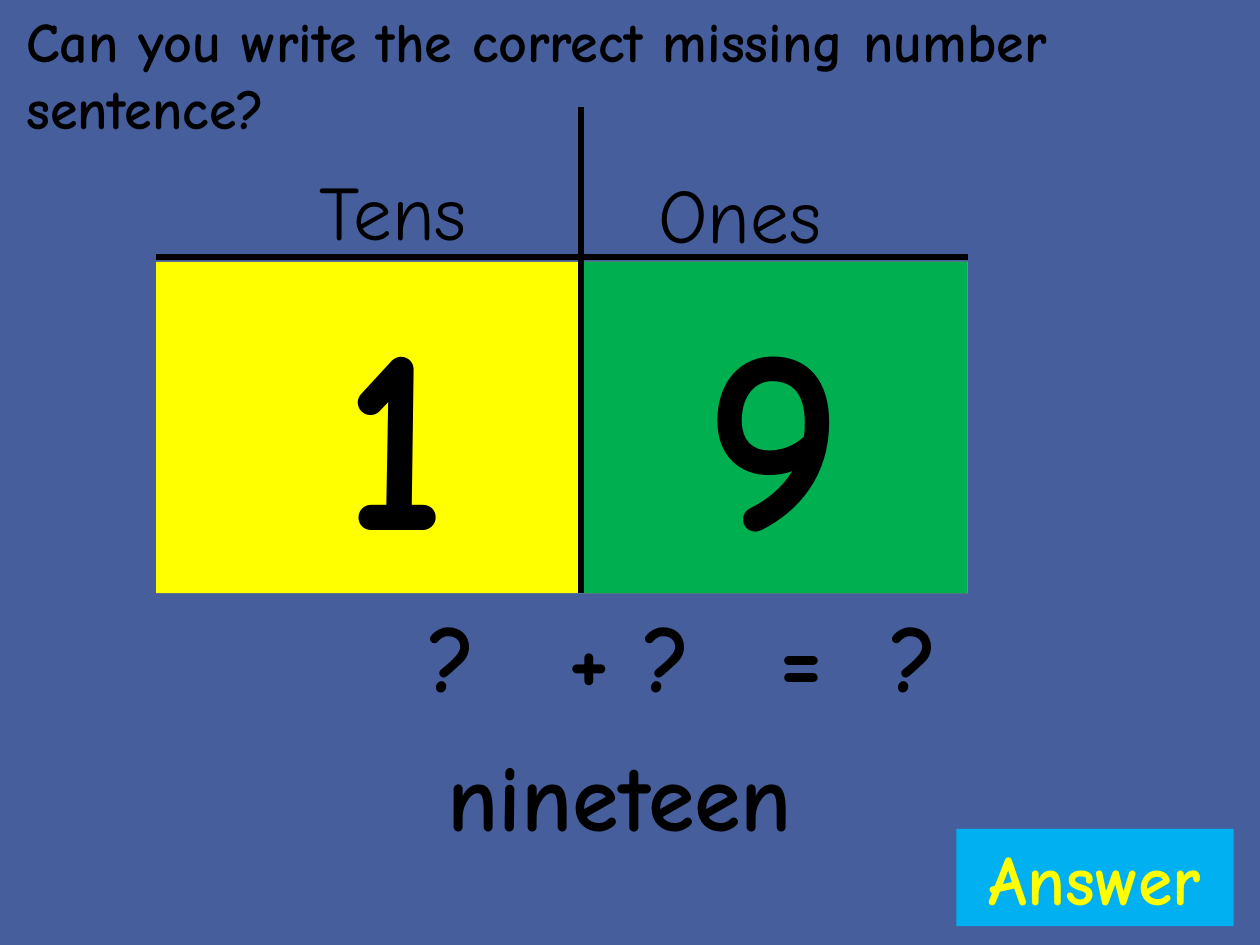
from dataclasses import dataclass

from lxml import etree
from pptx import Presentation
from pptx.dml.color import RGBColor
from pptx.enum.shapes import MSO_CONNECTOR as Connector, MSO_SHAPE as Shape
from pptx.enum.text import MSO_ANCHOR as Anchor, MSO_AUTO_SIZE as AutoSize, PP_ALIGN as Align
from pptx.oxml.ns import qn
from pptx.slide import Slide
from pptx.util import Cm, Pt

FONT = "Comic Neue"
COLORS = {
    "page": "465E9C",
    "ink": "000000",
    "tens": "FFFF00",
    "ones": "00B050",
    "button": "00B0F0",
    "button text": "FFFF00",
}

# Place value grid, in centimetres
LEFT, DIVIDER, RIGHT = 3.15, 11.71, 19.51
HEADER_TOP, RULE, CARD_TOP, BOTTOM = 2.16, 5.18, 5.28, 11.96
CARD_HEIGHT = 6.68
SUM_TOP, SUM_HEIGHT = 11.94, 2.57


@dataclass
class Box:
    text: str
    left: float
    top: float
    width: float
    height: float
    size: int
    fill: str = ""
    color: str = "ink"
    bold: bool = True
    align: Align = Align.CENTER
    anchor: Anchor = Anchor.TOP
    right_inset: float = 0.25
    gap: float = 0  # extra points after each space


@dataclass
class Line:
    x1: float
    y1: float
    x2: float
    y2: float


def rgb(name: str) -> RGBColor:
    return RGBColor.from_string(COLORS[name])


def draw_box(page: Slide, box: Box) -> None:
    place = Cm(box.left), Cm(box.top), Cm(box.width), Cm(box.height)
    if box.fill:
        shape = page.shapes.add_shape(Shape.RECTANGLE, *place)
        shape.shadow.inherit = False
        shape.fill.solid()
        shape.fill.fore_color.rgb = rgb(box.fill)
        shape.line.fill.background()
    else:
        shape = page.shapes.add_textbox(*place)
    frame = shape.text_frame
    frame.text = box.text
    frame.word_wrap = True
    frame.vertical_anchor = box.anchor
    frame.margin_right = Cm(box.right_inset)
    if box.anchor == Anchor.TOP and not box.gap:
        frame.auto_size = AutoSize.NONE
    para = frame.paragraphs[0]
    para.alignment = box.align
    if box.gap:
        sign, term = box.text.split(" ")
        para.text = sign
        space = para.add_run()
        space.text = " "
        space.font._element.set("spc", str(int(box.gap * 100)))
        para.add_run().text = term
    for span in para.runs:
        span.font.name = FONT
        span.font.size = Pt(box.size)
        span.font.bold = box.bold
        span.font.color.rgb = rgb(box.color)


def draw_line(page: Slide, line: Line) -> None:
    connector = page.shapes.add_connector(
        Connector.STRAIGHT, Cm(line.x1), Cm(line.y1), Cm(line.x2), Cm(line.y2))
    connector.line.color.rgb = rgb("ink")
    connector.line.width = Pt(3)
    etree.SubElement(connector._element.spPr, qn("a:effectLst"))


def heading(text: str, left: float, top: float) -> Box:
    return Box(text, left, top, 5.03, 3.18, 44, bold=False, anchor=Anchor.MIDDLE)


def sum_term(text: str, left: float, width: float, gap: float = 0) -> Box:
    return Box(text, left, SUM_TOP, width, SUM_HEIGHT, 54, gap=gap)


# Back to front
PARTS = [
    # Column headings
    heading("Tens", 5.41, 2.64),
    heading("Ones", 12.4, 2.69),
    Line(RIGHT, RULE, LEFT, RULE),
    # Digit cards; the ones card lies over the right of the tens card
    Box("1", LEFT, CARD_TOP, RIGHT - LEFT, CARD_HEIGHT, 150, "tens", right_inset=6.96),
    Box("9", DIVIDER, CARD_TOP, RIGHT - DIVIDER, CARD_HEIGHT, 150, "ones"),
    # Number word
    Box("nineteen", 6.5, 14.73, 11.99, SUM_HEIGHT, 54),
    Line(DIVIDER, HEADER_TOP, DIVIDER, BOTTOM),
    # Missing number sentence
    sum_term("?", 7.01, 4.19),
    sum_term("+ ?", 10.59, 4.19),
    sum_term("= ?", 14.2, 6.22, gap=19),
    # Question and button
    Box("Can you write the correct missing number sentence?",
        0.28, 0, 23.83, 3, 32, align=Align.LEFT),
    Box("Answer", 19.28, 16.71, 5.59, 1.96, 40, "button", "button text"),
]


def main() -> None:
    deck = Presentation()
    deck.slide_width, deck.slide_height = Cm(25.4), Cm(19.05)
    page = deck.slides.add_slide(deck.slide_layouts[6])
    page.background.fill.solid()
    page.background.fill.fore_color.rgb = rgb("page")
    for part in PARTS:
        if isinstance(part, Line):
            draw_line(page, part)
        else:
            draw_box(page, part)
    deck.save("out.pptx")


if __name__ == "__main__":
    main()
